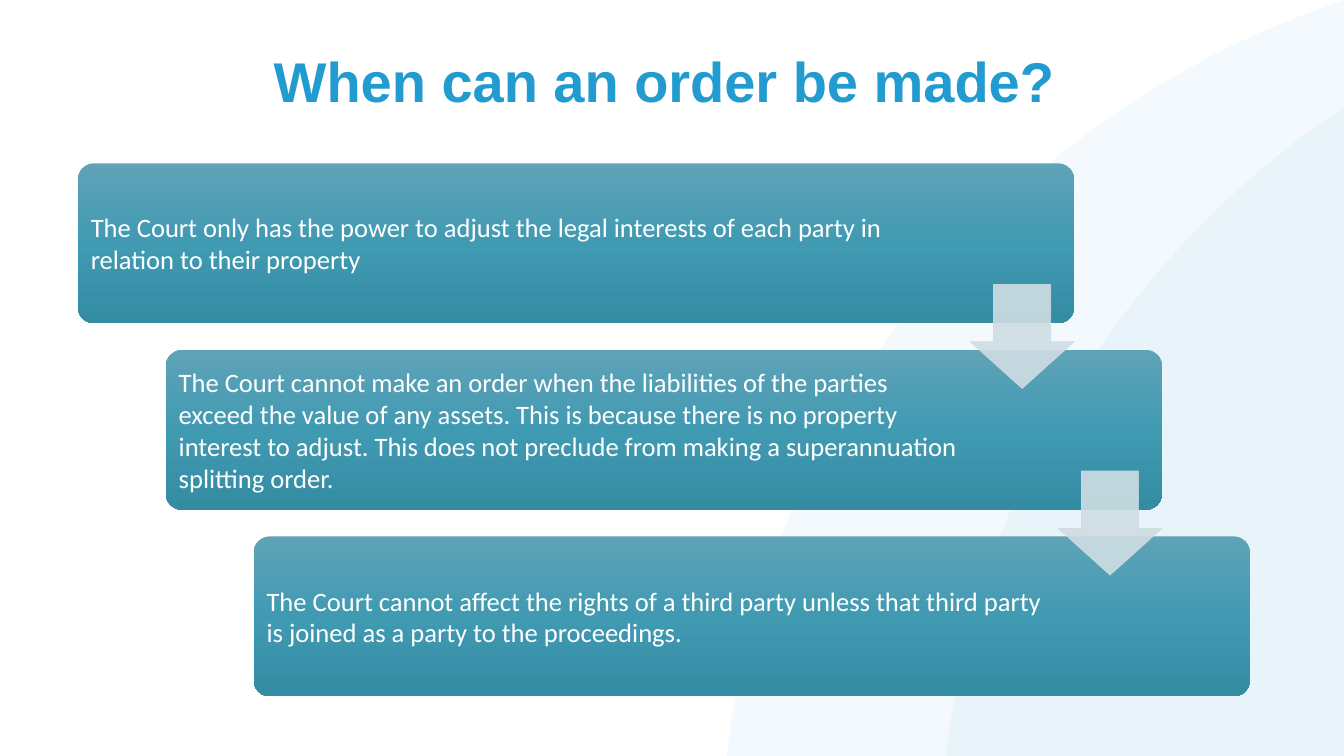
from copy import deepcopy

from lxml.etree import SubElement
from pptx import Presentation
from pptx.dml.color import RGBColor as RGB
from pptx.enum.shapes import MSO_SHAPE as SHAPE
from pptx.enum.text import MSO_ANCHOR as ANCHOR, PP_ALIGN as ALIGN
from pptx.oxml.ns import qn
from pptx.util import Inches, Pt

COLORS = {
    "accent": "229CD0",
    "bar_top": "60A3B8",
    "bar_middle": "409AB2",
    "bar_bottom": "348CA3",
    "arrow": "CFDDE3",
    "text": "FFFFFF",
}
WIDTH, HEIGHT = Inches(13.33), Inches(7.5)

TITLE = "When can an order be made?"
STEPS = [
    ("The Court only has the power to adjust the legal interests of each party in "
     "relation to their property", 0.83),
    ("The Court cannot make an order when the liabilities of the parties exceed the "
     "value of any assets. This is because there is no property interest to adjust. "
     "This does not preclude from making a superannuation splitting order.", 0.8),
    ("The Court cannot affect the rights of a third party unless that third party is "
     "joined as a party to the proceedings.", 0.8),
]


def percent_box(x, y, w, h):
    return tuple(int(v * side / 100)
                 for v, side in zip((x, y, w, h), (WIDTH, HEIGHT) * 2))


def color(name):
    return RGB.from_string(COLORS[name])


def set_alpha(sp, percent):
    for clr in sp.element.spPr.iter(qn("a:srgbClr")):
        SubElement(clr, qn("a:alpha")).set("val", str(percent * 1000))


def write(tf, text, *, size, font, fill, bold=False, align=ALIGN.LEFT,
          anchor=ANCHOR.TOP, spacing=1.0):
    tf.word_wrap = True
    tf.vertical_anchor = anchor
    p = tf.paragraphs[0]
    p.alignment, p.line_spacing = align, spacing
    r = p.add_run()
    r.text = text
    r.font.size, r.font.name, r.font.bold = Pt(size), font, bold
    r.font.color.rgb = color(fill)


def add_shape(s, kind, box, *adjustments):
    sp = s.shapes.add_shape(kind, *(int(v) for v in box))
    sp.shadow.inherit = False
    sp.line.fill.background()
    for i, value in enumerate(adjustments):
        sp.adjustments[i] = value
    return sp


def add_backdrop(s, box):
    sp = add_shape(s, SHAPE.OVAL, box)
    sp.fill.solid()
    sp.fill.fore_color.rgb = color("accent")
    set_alpha(sp, 5)


def add_title(s, box):
    title = s.shapes.title
    title.left, title.top, title.width, title.height = box
    s.shapes.element.append(title.element)
    write(title.text_frame, TITLE, size=40, font="Arial", fill="accent",
          bold=True, align=ALIGN.CENTER, spacing=0.9)


def add_bar(s, box, text, text_share):
    x, y, w, h = box
    sp = add_shape(s, SHAPE.ROUNDED_RECTANGLE, box, 0.1)
    sp.fill.gradient()
    sp.fill.gradient_angle = 270
    stops = sp.element.spPr.find(".//" + qn("a:gsLst"))
    stops.append(deepcopy(stops[0]))
    names = ("bar_top", "bar_middle", "bar_bottom")
    for i, (stop, name) in enumerate(zip(sp.fill.gradient_stops, names)):
        stop.position = i / 2
        stop.color.rgb = color(name)

    inset = 0.03 * h
    area = x + inset, y + inset, text_share * w, h - 2 * inset
    tf = s.shapes.add_textbox(*(int(v) for v in area)).text_frame
    tf.margin_left = tf.margin_right = tf.margin_top = tf.margin_bottom = Inches(0.08)
    write(tf, text, size=19, font="Calibri", fill="text", anchor=ANCHOR.MIDDLE)


def add_arrow(s, box):
    sp = add_shape(s, SHAPE.DOWN_ARROW, box, 0.55, 0.45)
    sp.fill.solid()
    sp.fill.fore_color.rgb = color("arrow")
    sp.line.color.rgb = color("arrow")
    sp.line.width = Pt(0.5)
    set_alpha(sp, 90)


def add_staircase(s, box):
    x, y, w, h = box
    bar_w, bar_h = 0.85 * w, 0.3 * h
    gaps = len(STEPS) - 1
    step_x, step_y = (w - bar_w) / gaps, (h - bar_h) / gaps
    for i, (text, text_share) in enumerate(STEPS):
        add_bar(s, (x + i * step_x, y + i * step_y, bar_w, bar_h), text, text_share)

    size = 0.65 * bar_h
    for i in range(gaps):
        right = x + i * step_x + bar_w
        gap_middle = y + i * step_y + (bar_h + step_y) / 2
        add_arrow(s, (right - size, gap_middle - size / 2, size, size))


def main():
    prs = Presentation()
    prs.slide_width, prs.slide_height = WIDTH, HEIGHT
    s = prs.slides.add_slide(prs.slide_layouts[5])
    for left in (53.6, 69.9):
        add_backdrop(s, percent_box(left, -6, 135.2, 240.3))
    add_title(s, percent_box(5.8, 6.5, 87.2, 13))
    add_staircase(s, percent_box(5.8, 21.6, 87.2, 70.5))
    prs.save("out.pptx")


if __name__ == "__main__":
    main()
